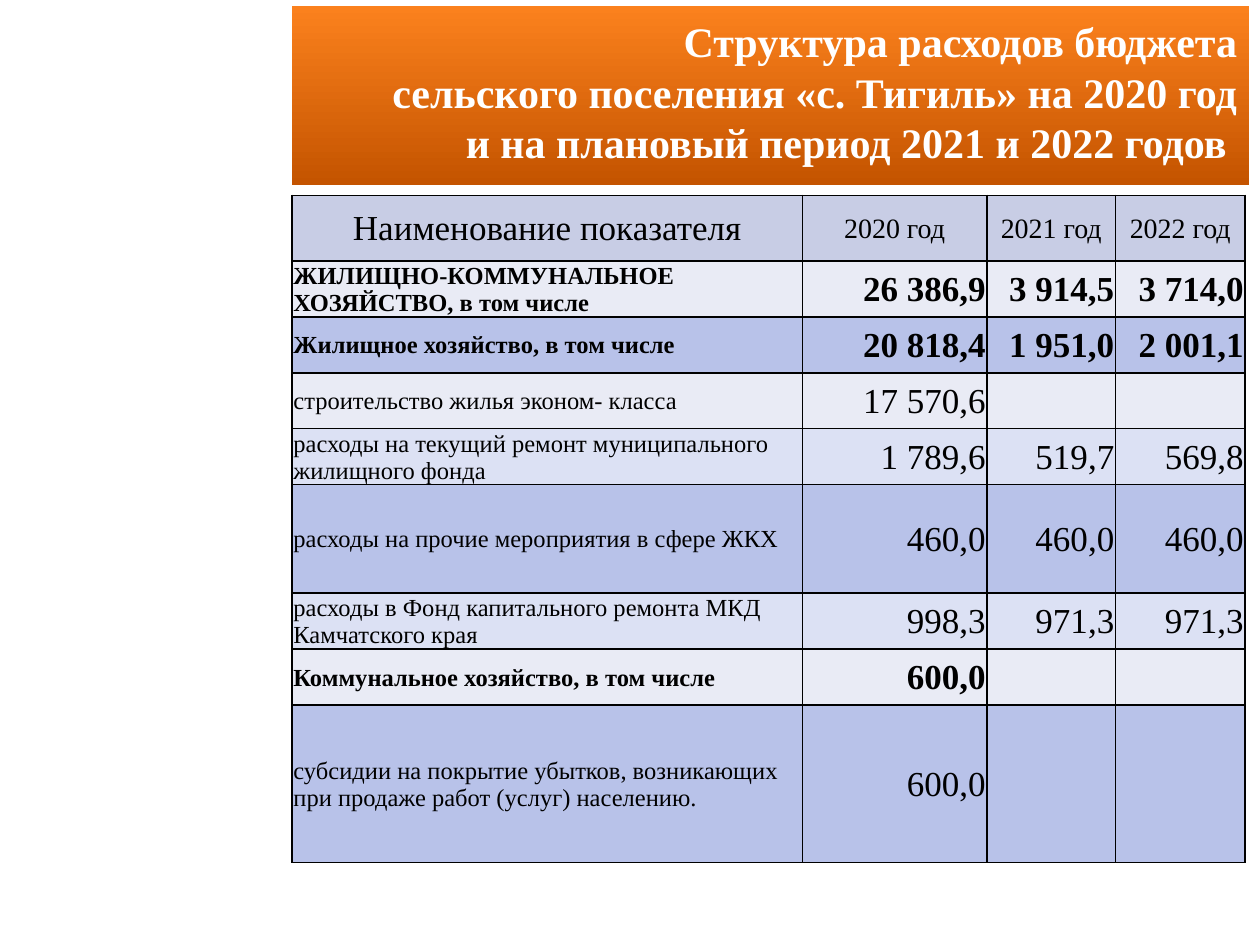
from dataclasses import dataclass

from lxml.etree import SubElement
from pptx import Presentation
from pptx.dml.color import RGBColor as Color
from pptx.enum.shapes import MSO_SHAPE as Shape
from pptx.enum.text import MSO_ANCHOR as Anchor, PP_ALIGN as Align
from pptx.oxml.ns import qn
from pptx.util import Pt


@dataclass(frozen=True)
class Theme:
    font: str = "Times New Roman"
    title_size: int = 24
    large: int = 20
    medium: int = 16
    label: int = 14
    text: str = "000000"
    title_text: str = "FFFFFF"
    banner: tuple = ("FB811D", "C45400")
    header: str = "C8CDE5"
    pale: str = "E9EBF5"
    light: str = "DCE1F4"
    accent: str = "B8C2E9"


THEME = Theme()


class Builder:
    def __init__(self, theme, page):
        self.theme = theme
        self.page = page

    def style(self, para, size, color, bold=False, align=Align.LEFT):
        para.alignment = align
        font = para.font
        font.name, font.size, font.bold = self.theme.font, Pt(size), bold
        font.color.rgb = Color.from_string(color)

    def banner(self, text, left, top, width, height):
        box = self.page.shapes.add_shape(
            Shape.RECTANGLE, Pt(left), Pt(top), Pt(width), Pt(height))
        box.shadow.inherit = False
        box.line.fill.background()
        box.fill.gradient()
        box.fill.gradient_angle = 270
        for stop, color in zip(box.fill.gradient_stops, self.theme.banner):
            stop.color.rgb = Color.from_string(color)
        frame = box.text_frame
        frame.word_wrap = True
        frame.vertical_anchor = Anchor.TOP
        frame.margin_top = Pt(5)
        para = frame.paragraphs[0]
        para.text = text
        para.line_spacing = Pt(29)
        self.style(para, self.theme.title_size, self.theme.title_text,
                   True, Align.RIGHT)

    def borders(self, cell):
        props = cell._tc.get_or_add_tcPr()
        for side in ("lnL", "lnR", "lnT", "lnB"):
            line = SubElement(props, qn(f"a:{side}"), w=str(Pt(1)))
            fill = SubElement(line, qn("a:solidFill"))
            SubElement(fill, qn("a:srgbClr"), val=self.theme.text)

    def cell(self, cell, text, fill, size, bold, align):
        self.borders(cell)
        cell.fill.solid()
        cell.fill.fore_color.rgb = Color.from_string(fill)
        if not text:
            return
        cell.vertical_anchor = Anchor.MIDDLE
        cell.margin_left = cell.margin_right = cell.margin_top = Pt(0.7)
        cell.margin_bottom = Pt(0)
        cell.text = text
        self.style(cell.text_frame.paragraphs[0], size, self.theme.text, bold, align)

    def table(self, header, rows, left, top, widths, header_height):
        theme = self.theme
        heights = [header_height] + [row[0] for row in rows]
        table = self.page.shapes.add_table(
            len(heights), len(widths), Pt(left), Pt(top),
            Pt(sum(widths)), Pt(sum(heights))).table
        table.first_row = table.horz_banding = False
        for column, width in zip(table.columns, widths):
            column.width = Pt(width)
        for row, height in zip(table.rows, heights):
            row.height = Pt(height)
        for col, text in enumerate(header):
            size = theme.medium if col else theme.large
            self.cell(table.cell(0, col), text, theme.header, size, False, Align.CENTER)
        for index, (_, fill, bold, *texts) in enumerate(rows, 1):
            for col, text in enumerate(texts):
                size = theme.large if col else theme.label
                align = Align.RIGHT if col else Align.LEFT
                self.cell(table.cell(index, col), text, fill, size, bold, align)


# Table content: height, fill, bold, label, then the three years
HEADER = ["Наименование показателя", "2020 год", "2021 год", "2022 год"]
ROW = 32
ROWS = [
    (ROW, THEME.pale, True, "ЖИЛИЩНО-КОММУНАЛЬНОЕ ХОЗЯЙСТВО, в том числе",
     "26 386,9", "3 914,5", "3 714,0"),
    (ROW, THEME.accent, True, "Жилищное хозяйство, в том числе",
     "20 818,4", "1 951,0", "2 001,1"),
    (ROW, THEME.pale, False, "строительство жилья эконом- класса",
     "17 570,6", "", ""),
    (ROW, THEME.light, False,
     "расходы на текущий ремонт муниципального жилищного фонда",
     "1 789,6", "519,7", "569,8"),
    (62, THEME.accent, False, "расходы на прочие мероприятия в сфере ЖКХ",
     "460,0", "460,0", "460,0"),
    (ROW, THEME.light, False,
     "расходы в Фонд капитального ремонта МКД Камчатского края",
     "998,3", "971,3", "971,3"),
    (ROW, THEME.pale, True, "Коммунальное хозяйство, в том числе",
     "600,0", "", ""),
    (90, THEME.accent, False,
     "субсидии на покрытие убытков, возникающих при продаже работ (услуг) населению.",
     "600,0", "", ""),
]


def main():
    deck = Presentation()
    deck.slide_width, deck.slide_height = Pt(720), Pt(540)
    builder = Builder(THEME, deck.slides.add_slide(deck.slide_layouts[6]))

    # Title banner
    builder.banner("Структура расходов бюджета\v"
                   "сельского поселения «с. Тигиль» на 2020 год\v"
                   "и на плановый период 2021 и 2022 годов ",
                   167, 3.6, 547, 102)

    # Budget table
    builder.table(HEADER, ROWS, 167, 111.6, [291.5, 105.5, 73.5, 74], 37.5)

    deck.save("out.pptx")


if __name__ == "__main__":
    main()
